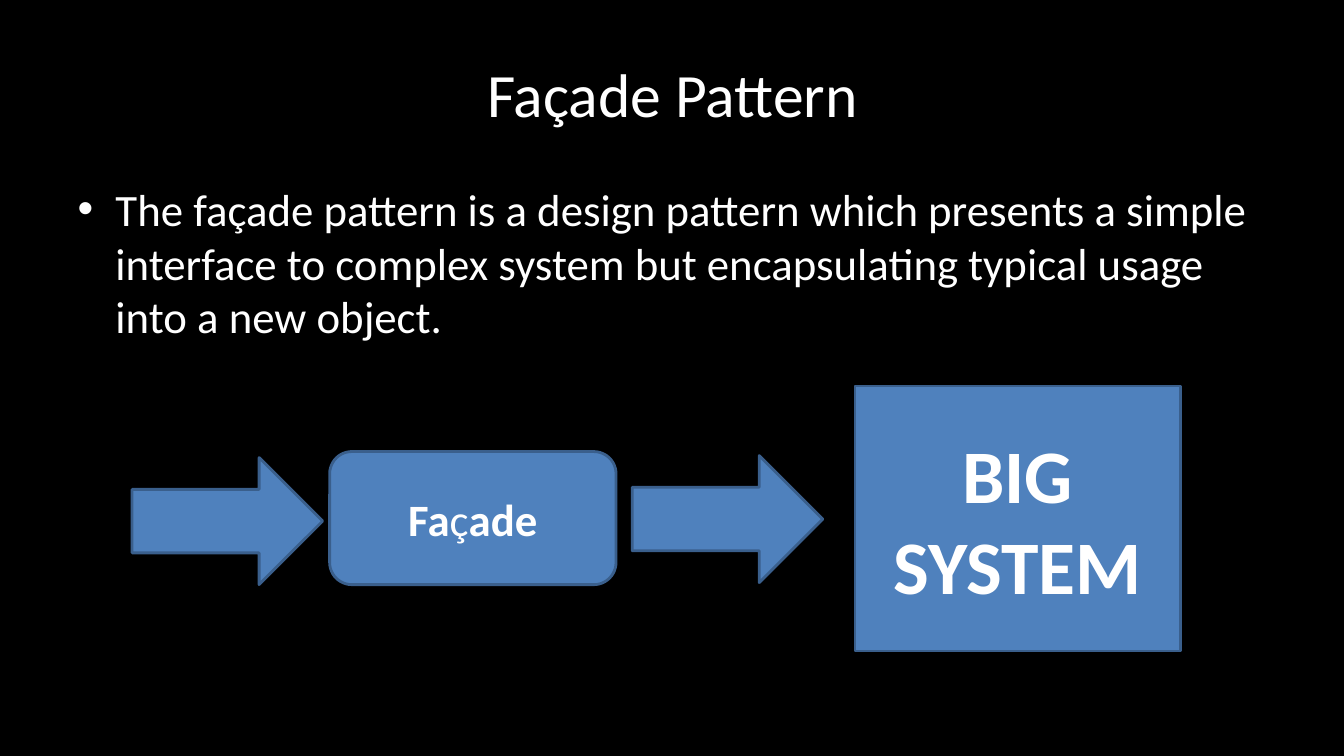
from dataclasses import dataclass

import pptx
import pptx.dml.color
import pptx.enum.shapes
import pptx.enum.text
import pptx.presentation
import pptx.shapes.autoshape
import pptx.slide
import pptx.text.text
import pptx.util

Inches = pptx.util.Inches
Preset = pptx.enum.shapes.MSO_SHAPE
FONT = "Calibri"
COLORS = {"background": "000000", "text": "FFFFFF", "fill": "4F81BD", "outline": "3A5F8C"}


@dataclass(frozen=True)
class Span:
    text: str
    bold: bool = True


@dataclass(frozen=True)
class Block:
    preset: Preset
    left: float
    top: float
    width: float
    height: float
    lines: tuple[tuple[Span, ...], ...] = ()
    size: int = 32


BLOCKS = (
    Block(Preset.ROUNDED_RECTANGLE, 3.27, 4.48, 2.84, 1.32,
          ((Span("Fa"), Span("ç", bold=False), Span("ade")),)),
    Block(Preset.RECTANGLE, 8.48, 3.83, 3.23, 2.63,
          ((Span("BIG"),), (Span("SYSTEM"),)), 54),
    Block(Preset.RIGHT_ARROW, 6.27, 4.52, 1.89, 1.26),
    Block(Preset.RIGHT_ARROW, 1.31, 4.54, 1.89, 1.26),
)


def color(name: str) -> pptx.dml.color.RGBColor:
    return pptx.dml.color.RGBColor.from_string(COLORS[name])


def style_font(font: pptx.text.text.Font, size: int) -> None:
    font.name = FONT
    font.size = pptx.util.Pt(size)
    font.color.rgb = color("text")


def fill_placeholder(page: pptx.slide.Slide, index: int, top: float, height: float,
                     text: str, size: int) -> None:
    box = page.placeholders[index]
    box.left, box.top = Inches(0.67), Inches(top)
    box.width, box.height = Inches(12), Inches(height)
    box.text_frame.text = text
    style_font(box.text_frame.paragraphs[0].font, size)


def write_lines(shape: pptx.shapes.autoshape.Shape, block: Block) -> None:
    frame = shape.text_frame
    frame.vertical_anchor = pptx.enum.text.MSO_ANCHOR.MIDDLE
    for number, line in enumerate(block.lines):
        para = frame.add_paragraph() if number else frame.paragraphs[0]
        para.alignment = pptx.enum.text.PP_ALIGN.CENTER
        style_font(para.font, block.size)
        for span in line:
            run = para.add_run()
            run.text = span.text
            run.font.bold = span.bold


def draw_block(page: pptx.slide.Slide, block: Block) -> None:
    shape = page.shapes.add_shape(block.preset, Inches(block.left), Inches(block.top),
                                  Inches(block.width), Inches(block.height))
    shape.shadow.inherit = False
    shape.fill.solid()
    shape.fill.fore_color.rgb = color("fill")
    shape.line.color.rgb = color("outline")
    shape.line.width = pptx.util.Pt(2)
    write_lines(shape, block)


def build_deck() -> pptx.presentation.Presentation:
    deck = pptx.Presentation()
    deck.slide_width, deck.slide_height = Inches(13.33), Inches(7.5)
    page = deck.slides.add_slide(deck.slide_layouts[1])
    page.background.fill.solid()
    page.background.fill.fore_color.rgb = color("background")
    fill_placeholder(page, 0, 0.3, 1.25, "Façade Pattern", 44)
    fill_placeholder(
        page, 1, 1.75, 4.95,
        "The façade pattern is a design pattern which presents a simple interface to "
        "complex system but encapsulating typical usage into a new object.", 32)
    for block in BLOCKS:
        draw_block(page, block)
    return deck


def main() -> None:
    deck = build_deck()
    deck.save("out.pptx")


if __name__ == "__main__":
    main()
